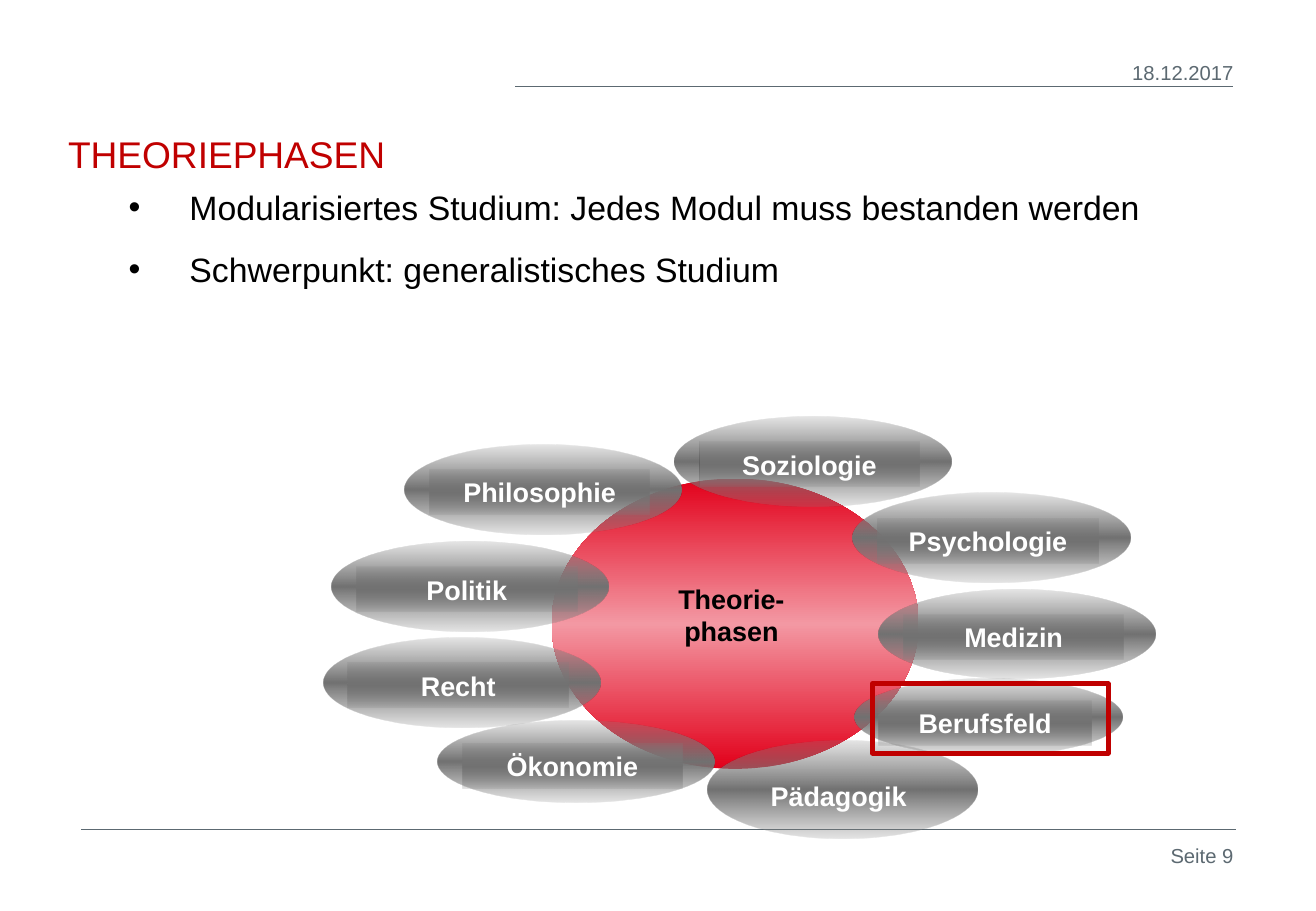
from lxml.etree import SubElement
from pptx import Presentation
from pptx.dml.color import RGBColor
from pptx.enum.shapes import MSO_CONNECTOR, MSO_SHAPE
from pptx.enum.text import MSO_ANCHOR, PP_ALIGN
from pptx.oxml.ns import qn
from pptx.util import Inches, Pt

WIDTH, HEIGHT = Inches(10.83), Inches(7.5)
FONT = "Arial"
BLACK = RGBColor(0x00, 0x00, 0x00)
WHITE = RGBColor(0xFF, 0xFF, 0xFF)
DARK_RED = RGBColor(0xC0, 0x00, 0x00)
SLATE = RGBColor(0x5C, 0x69, 0x71)
RED = RGBColor(0xE2, 0x00, 0x1A)
PINK = RGBColor(0xF3, 0x98, 0xA3)
GREY = RGBColor(0x80, 0x80, 0x80)
DARK_GREY = RGBColor(0x72, 0x72, 0x72)

# Gradients: outer colour, middle colour, opacity of the outer colour in percent
RED_GLOW = (RED, PINK, 100)
GREY_GLOW = (GREY, DARK_GREY, 20)

BULLETS = ["Modularisiertes Studium: Jedes Modul muss bestanden werden",
           "Schwerpunkt: generalistisches Studium"]

# Name, left, top, width, height (percent of the slide), label on a band
SUBJECTS = [
    ("Psychologie", 64.82, 54.13, 21.05, 9.87, True),
    ("Pädagogik", 53.74, 81.33, 20.5, 10.67, False),
    ("Soziologie", 51.25, 45.73, 21.05, 9.87, True),
    ("Recht", 24.56, 70, 21.05, 9.87, True),
    ("Philosophie", 30.75, 48.8, 21.05, 9.87, True),
    ("Politik", 25.21, 59.47, 21.05, 9.87, True),
    ("Medizin", 66.76, 64.67, 21.05, 9.87, True),
    ("Ökonomie", 33.24, 79.07, 21.05, 9.07, True),
    ("Berufsfeld", 64.91, 74.53, 20.41, 8.4, True),
]


def across(share):
    return int(WIDTH * share / 100)


def down(share):
    return int(HEIGHT * share / 100)


def box(left, top, width, height):
    return across(left), down(top), across(width), down(height)


def write(sp, lines, size, color, align=PP_ALIGN.LEFT, bold=False,
          anchor=MSO_ANCHOR.TOP):
    tf = sp.text_frame
    tf.word_wrap = True
    tf.vertical_anchor = anchor
    tf.text = "\n".join(lines)
    for p in tf.paragraphs:
        p.alignment = align
        for r in p.runs:
            r.font.name, r.font.size, r.font.bold = FONT, Pt(size), bold
            r.font.color.rgb = color


def add_text(s, area, lines, size, color, **style):
    sp = s.shapes.add_textbox(*area)
    write(sp, lines, size, color, **style)
    return sp


def add_rule(s, left, right, top):
    line = s.shapes.add_connector(MSO_CONNECTOR.STRAIGHT, across(left),
                                  down(top), across(right), down(top))
    line.line.color.rgb = SLATE
    line.line.width = Pt(0.25)
    SubElement(line._element.spPr, qn("a:effectLst"))


def add_glow(s, kind, area, glow):
    sp = s.shapes.add_shape(kind, *area)
    sp.shadow.inherit = False
    sp.line.fill.background()
    sp.fill.gradient()
    sp.fill.gradient_angle = 90
    outer, middle, opacity = glow
    stops = sp._element.spPr.find(qn("a:gradFill")).find(qn("a:gsLst"))
    stops.clear()
    for pos, color, alpha in ((0, outer, opacity), (50, middle, 100),
                              (100, outer, opacity)):
        stop = SubElement(stops, qn("a:gs"), pos=str(pos * 1000))
        rgb = SubElement(stop, qn("a:srgbClr"), val=str(color))
        SubElement(rgb, qn("a:alpha"), val=str(alpha * 1000))
    return sp


def add_subject(s, name, left, top, width, height, banded):
    add_glow(s, MSO_SHAPE.OVAL, box(left, top, width, height), GREY_GLOW)
    drop = 0.28 if banded else 0.33
    area = box(left + 0.09 * width, top + drop * height, 0.795 * width, 4.93)
    if banded:
        label = add_glow(s, MSO_SHAPE.RECTANGLE, area, GREY_GLOW)
    else:
        label = s.shapes.add_textbox(*area)
    write(label, [name], 16, WHITE, align=PP_ALIGN.CENTER, bold=True,
          anchor=MSO_ANCHOR.MIDDLE)


def add_bullets(s, area, lines):
    sp = add_text(s, area, lines, 20, BLACK)
    for p in sp.text_frame.paragraphs:
        pPr = p._p.get_or_add_pPr()
        pPr.set("marL", str(Inches(1)))
        pPr.set("indent", str(Inches(-0.5)))
        p.space_after = Pt(12.5)
        SubElement(pPr, qn("a:buFont"), typeface=FONT)
        SubElement(pPr, qn("a:buChar"), char="•")


def main():
    prs = Presentation()
    prs.slide_width, prs.slide_height = WIDTH, HEIGHT
    s = prs.slides.add_slide(prs.slide_layouts[5])

    # Header and footer
    add_rule(s, 6.19, 93.91, 91.07)
    add_rule(s, 39.15, 93.72, 9.47)
    add_text(s, box(74.7, 6, 19.94, 4.13), ["18.12.2017"], 12, SLATE,
             align=PP_ALIGN.RIGHT)
    add_text(s, box(85.41, 91.87, 9.23, 4.13), ["Seite 9"], 12, SLATE,
             align=PP_ALIGN.RIGHT)

    # Title and bullets
    title = s.shapes.title
    title.left, title.top, title.width, title.height = box(4.25, 13.73, 92.34, 6)
    write(title, ["THEORIEPHASEN"], 22, DARK_RED)
    add_bullets(s, box(4.25, 19.87, 92.34, 13.33), BULLETS)

    # Centre of the diagram
    add_glow(s, MSO_SHAPE.OVAL, box(41.92, 52.53, 27.89, 31.87), RED_GLOW)
    add_text(s, box(48.75, 63.2, 13.67, 8.53), ["Theorie-phasen"], 16, BLACK,
             align=PP_ALIGN.CENTER, bold=True, anchor=MSO_ANCHOR.MIDDLE)

    # Subjects around it
    for subject in SUBJECTS:
        add_subject(s, *subject)

    # Frame around Berufsfeld
    frame = s.shapes.add_shape(MSO_SHAPE.RECTANGLE,
                               *box(66.3, 75.07, 17.91, 7.6))
    frame.shadow.inherit = False
    frame.fill.background()
    frame.line.color.rgb = DARK_RED
    frame.line.width = Pt(3)

    prs.save("out.pptx")


if __name__ == "__main__":
    main()
